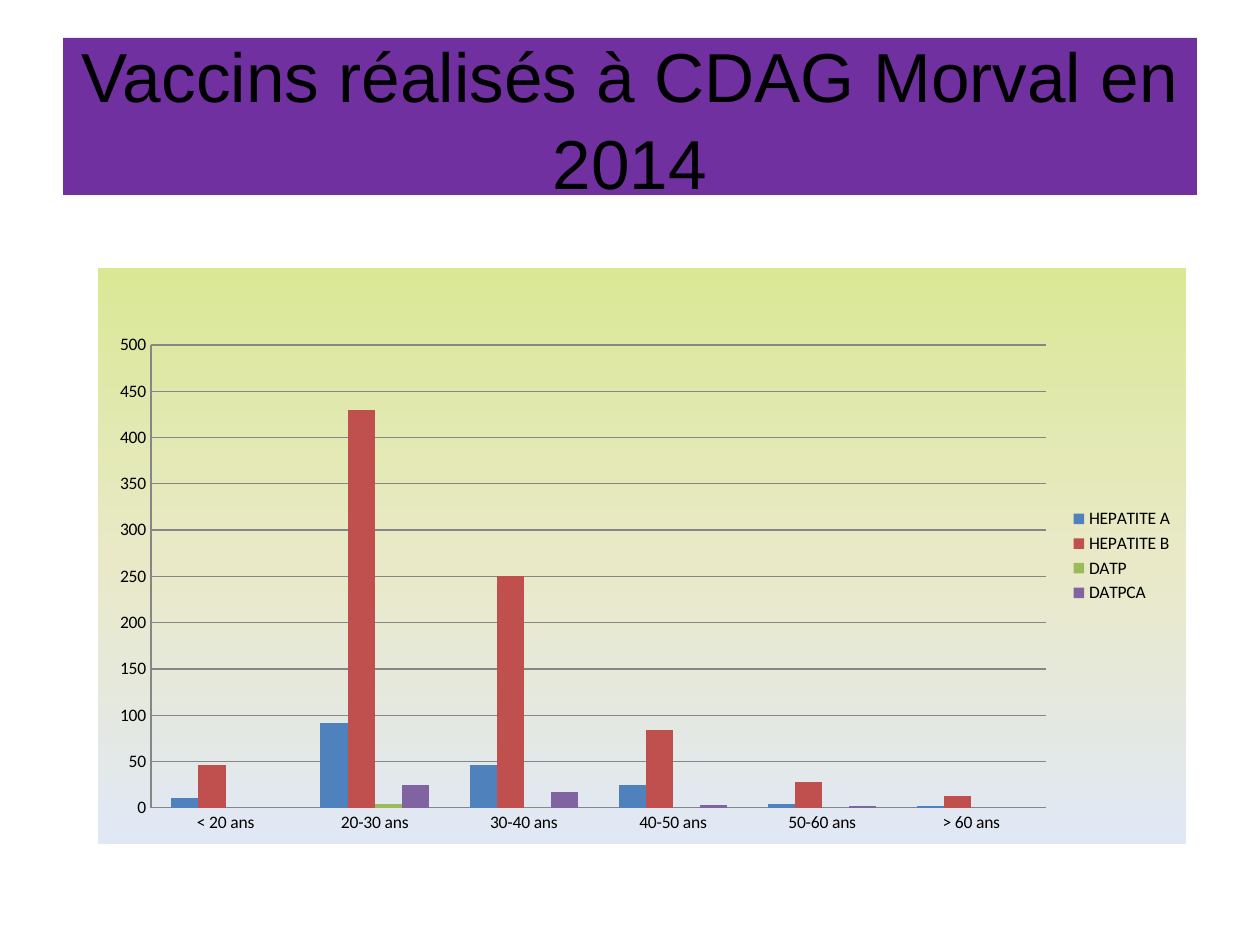
import pptx
import pptx.chart.data
import pptx.dml.color
import pptx.enum.chart
import pptx.enum.text
import pptx.oxml
import pptx.oxml.ns
import pptx.util

EMU_PER_PX = 914400 // 126
AGES = ["< 20 ans", "20-30 ans", "30-40 ans", "40-50 ans", "50-60 ans", "> 60 ans"]
VACCINES = [
    ("HEPATITE A", "4F81BD", [11, 92, 46, 25, 4, 2]),
    ("HEPATITE B", "C0504D", [46, 430, 250, 84, 28, 13]),
    ("DATP", "9BBB59", [None, 4, 0, None, None, None]),
    ("DATPCA", "8064A2", [None, 25, 17, 3, 2, None]),
]
BACKGROUND_STOPS = [(0, "DAE896"), (50, "E9E9C7"), (100, "E1E8F5")]


def px(length):
    return pptx.util.Emu(length * EMU_PER_PX)


def color(hex_string):
    return pptx.dml.color.RGBColor.from_string(hex_string)


class SlideBuilder:
    text_color = "000000"
    grid_color = "868686"
    title_font = "Arial"
    chart_font = "Calibri"

    def __init__(self, presentation):
        self.slide = presentation.slides.add_slide(presentation.slide_layouts[5])

    def title(self, text, box, fill):
        shape = self.slide.shapes.title
        shape.left, shape.top, shape.width, shape.height = map(px, box)
        shape.fill.solid()
        shape.fill.fore_color.rgb = color(fill)
        frame = shape.text_frame
        frame.text = text
        frame.word_wrap = True
        frame.auto_size = pptx.enum.text.MSO_AUTO_SIZE.NONE
        frame.vertical_anchor = pptx.enum.text.MSO_ANCHOR.MIDDLE
        paragraph = frame.paragraphs[0]
        paragraph.alignment = pptx.enum.text.PP_ALIGN.CENTER
        paragraph.line_spacing = 1.05
        paragraph.font.name = self.title_font
        paragraph.font.size = pptx.util.Pt(39.6)
        paragraph.font.color.rgb = color(self.text_color)

    def column_chart(self, categories, series_rows, box, plot_box, stops):
        data = pptx.chart.data.CategoryChartData()
        data.categories = categories
        for name, _, values in series_rows:
            data.add_series(name, values)
        chart = self.slide.shapes.add_chart(
            pptx.enum.chart.XL_CHART_TYPE.COLUMN_CLUSTERED, *map(px, box), data
        ).chart
        chart.has_title = False
        chart.font.name = self.chart_font
        chart.font.size = pptx.util.Pt(10)
        chart.font.color.rgb = color(self.text_color)

        # Columns
        plot = chart.plots[0]
        plot.gap_width = 150
        plot.overlap = 0
        plot.vary_by_categories = False
        for series, (_, fill, _) in zip(plot.series, series_rows):
            series.format.fill.solid()
            series.format.fill.fore_color.rgb = color(fill)

        # Axes and gridlines
        value_axis = chart.value_axis
        value_axis.minimum_scale = 0
        value_axis.maximum_scale = 500
        value_axis.major_unit = 50
        value_axis.has_major_gridlines = True
        for axis in (chart.category_axis, value_axis):
            axis.major_tick_mark = pptx.enum.chart.XL_TICK_MARK.NONE
        for part in (chart.category_axis, value_axis, value_axis.major_gridlines):
            part.format.line.color.rgb = color(self.grid_color)
            part.format.line.width = pptx.util.Pt(0.75)

        # Legend
        chart.has_legend = True
        chart.legend.position = pptx.enum.chart.XL_LEGEND_POSITION.RIGHT
        chart.legend.include_in_layout = False

        self.place_plot(chart, box, plot_box)
        self.chart_background(chart, stops)

    def place_plot(self, chart, box, plot_box):
        left, top, width, height = box
        plot_left, plot_top, plot_width, plot_height = plot_box
        fractions = {
            "x": (plot_left - left) / width,
            "y": (plot_top - top) / height,
            "w": plot_width / width,
            "h": plot_height / height,
        }
        modes = "".join(f'<c:{axis}Mode val="edge"/>' for axis in "xy")
        sizes = "".join(f'<c:{key} val="{value:.4f}"/>' for key, value in fractions.items())
        layout = pptx.oxml.parse_xml(
            f'<c:layout {pptx.oxml.ns.nsdecls("c")}><c:manualLayout>'
            f'<c:layoutTarget val="inner"/>{modes}{sizes}</c:manualLayout></c:layout>'
        )
        plot_area = chart.element.chart.plotArea
        for old_layout in plot_area.findall(pptx.oxml.ns.qn("c:layout")):
            plot_area.remove(old_layout)
        plot_area.insert(0, layout)

    def chart_background(self, chart, stops):
        gradient = "".join(
            f'<a:gs pos="{position * 1000}"><a:srgbClr val="{fill}"/></a:gs>'
            for position, fill in stops
        )
        properties = pptx.oxml.parse_xml(
            f'<c:spPr {pptx.oxml.ns.nsdecls("c", "a")}><a:gradFill><a:gsLst>{gradient}</a:gsLst>'
            '<a:lin ang="5400000" scaled="0"/></a:gradFill><a:ln><a:noFill/></a:ln></c:spPr>'
        )
        chart.element.chart.addnext(properties)


def main():
    presentation = pptx.Presentation()
    presentation.slide_width = px(1260)
    presentation.slide_height = px(945)
    builder = SlideBuilder(presentation)

    # Title band
    builder.title("Vaccins réalisés à CDAG Morval en 2014", (63, 38, 1134, 157), "7030A0")

    # Vaccines by age group
    builder.column_chart(
        AGES, VACCINES, (98, 268, 1088, 576), (151, 345, 895, 463), BACKGROUND_STOPS
    )
    presentation.save("out.pptx")


if __name__ == "__main__":
    main()
